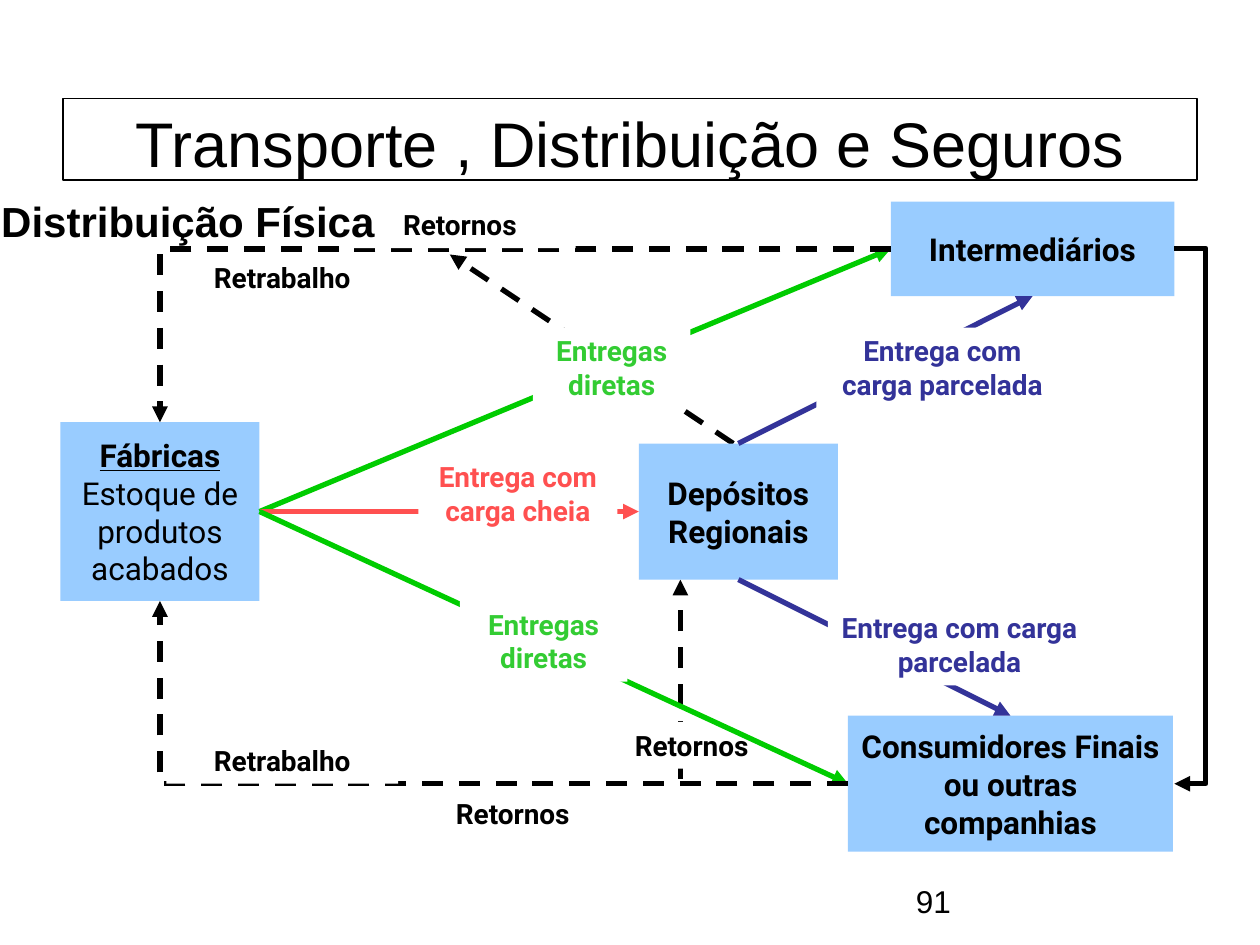
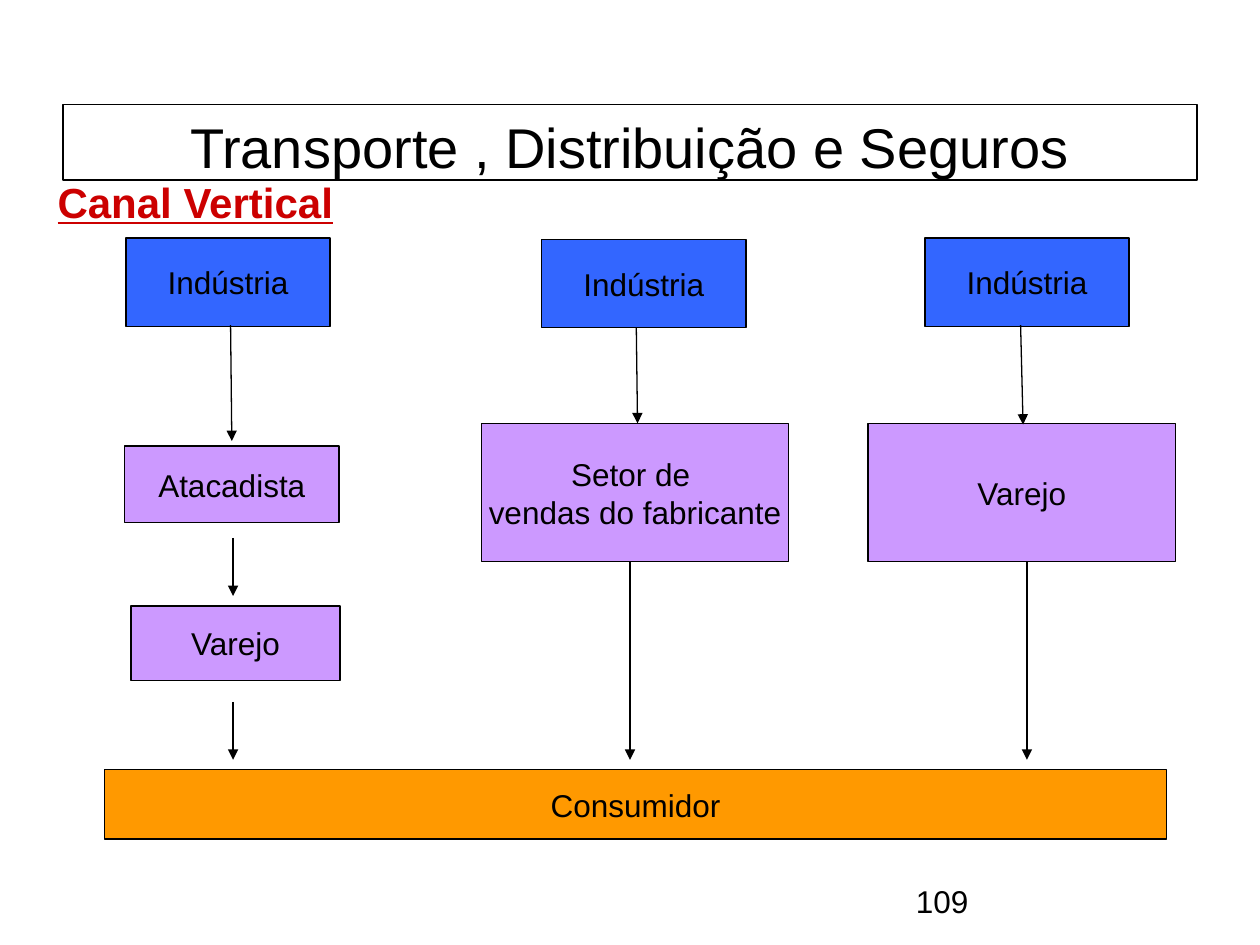
"""Builds two slides on physical distribution and vertical sales channels."""
from lxml.etree import SubElement
from pptx import Presentation
from pptx.dml.color import RGBColor
from pptx.enum.dml import MSO_LINE as Dash
from pptx.enum.shapes import MSO_CONNECTOR as Link, MSO_SHAPE as Preset
from pptx.enum.text import MSO_ANCHOR as Anchor, MSO_AUTO_SIZE as Fit, PP_ALIGN as Align
from pptx.oxml.ns import qn
from pptx.util import Inches, Pt

COLUMNS, ROWS = 100, 75
CELL = Inches(10) / COLUMNS
COLORS = {
    "ink": "000000", "paper": "FFFFFF", "site": "99CCFF", "direct": "00CC00",
    "direct text": "33CC33", "full load": "FF5050", "split load": "333399",
    "industry": "3366FF", "trade": "CC99FF", "consumer": "FF9900", "accent": "CC0000",
}
TITLE = "Transporte , Distribuição e Seguros"
TITLE_LEFT, TITLE_WIDTH, TITLE_BOTTOM = 5, 90, 14.3
TOP, LEFT, BOTTOM, RIGHT = range(4)
THICK, THIN = 3, 0.75

SITES = {
    "factories": (4.8, 33.5, 15.8, 14.2, ["Fábricas"], ["Estoque de", "produtos", "acabados"]),
    "middlemen": (70.7, 16, 22.5, 7.5, ["Intermediários"], []),
    "depots": (50.7, 35.2, 15.8, 10.8, ["Depósitos", "Regionais"], []),
    "consumers": (67.3, 56.8, 25.8, 10.8, ["Consumidores Finais", "ou outras", "companhias"], []),
}
DELIVERIES = [
    ("factories", RIGHT, "middlemen", LEFT, "direct"),
    ("factories", RIGHT, "depots", LEFT, "full load"),
    ("factories", RIGHT, "consumers", LEFT, "direct"),
    ("depots", TOP, "middlemen", BOTTOM, "split load"),
    ("depots", BOTTOM, "consumers", TOP, "split load"),
]
REWORK = [("consumers", LEFT, "factories", BOTTOM), ("middlemen", LEFT, "factories", TOP)]
DEPOT_RETURNS = [(58.2, 35.2, 35.7, 20.2), (54, 61.8, 54, 46)]
RESALE_LOOP = [(93.2, 19.7), (95.7, 19.7), (95.7, 62.2), (93.2, 62.2)]
DEPOT_LABEL = (45.7, 57.3, 18.4, 3.7, "Retornos", "ink")
ROUTE_LABELS = [
    (64.8, 26, 20, 6.4, "Entrega com carga parcelada", "split load"),
    (65.7, 48, 20.9, 6.4, "Entrega com carga parcelada", "split load"),
    (33.2, 36, 15.8, 9, "Entrega com carga cheia", "full load"),
    (42.3, 26, 12.5, 6.4, "Entregas diretas", "direct text"),
    (36.5, 47.7, 13.3, 6.4, "Entregas diretas", "direct text"),
    (27.3, 16, 18.4, 3.7, "Retornos", "ink"),
    (13.2, 58.5, 18.4, 3.7, "Retrabalho", "ink"),
    (31.5, 62.7, 18.4, 3.7, "Retornos", "ink"),
    (13.2, 20.2, 18.4, 3.7, "Retrabalho", "ink"),
]

CHANNEL_STEPS = [
    (10, 18.9, 16.2, 7, ["Indústria"], "industry"),
    (43, 19, 16.2, 7, ["Indústria"], "industry"),
    (73.4, 18.9, 16.2, 7, ["Indústria"], "industry"),
    (9.9, 35.4, 17, 6.1, ["Atacadista"], "trade"),
    (10.4, 48.1, 16.6, 5.9, ["Varejo"], "trade"),
    (38.2, 33.6, 24.4, 11, ["Setor de ", "vendas do fabricante"], "trade"),
    (68.9, 33.6, 24.4, 11, ["Varejo"], "trade"),
    (8.3, 61.1, 84.3, 5.5, ["Consumidor"], "consumer"),
]
CHANNEL_FLOWS = [
    (18.3, 25.8, 18.4, 35), (18.5, 42.7, 18.5, 47.3), (18.5, 55.7, 18.5, 60.3),
    (50.5, 26, 50.6, 33.6), (50, 44.6, 50, 60.3),
    (81, 25.8, 81.2, 33.7), (81.5, 44.6, 81.5, 60.3),
]


def cells(*counts):
    return [round(count * CELL) for count in counts]


def color(name):
    return RGBColor.from_string(COLORS[name])


def write(frame, lines, size, align=Align.CENTER, font="Arial", ink="ink"):
    """Fill a frame with (words, bold, underline) lines."""
    for number, (words, bold, underline) in enumerate(lines):
        line = frame.paragraphs[0] if number == 0 else frame.add_paragraph()
        line.alignment = align
        run = line.add_run()
        run.text = words
        run.font.name, run.font.size = font, Pt(size)
        run.font.bold, run.font.underline = bold, underline
        run.font.color.rgb = color(ink)


def paint(shape, fill, outlined):
    shape.fill.solid()
    shape.fill.fore_color.rgb = color(fill)
    if outlined:
        shape.line.color.rgb = color("ink")
        shape.line.width = Pt(THIN)
    else:
        shape.line.fill.background()


def add_box(slide, area, lines, size, fill, font="Arial", ink="ink", outlined=False, label=False):
    box = slide.shapes.add_shape(Preset.RECTANGLE, *cells(*area))
    box.shadow.inherit = False
    paint(box, fill, outlined)
    frame = box.text_frame
    frame.word_wrap = label
    frame.vertical_anchor = Anchor.TOP if label else Anchor.MIDDLE
    write(frame, lines, size, font=font, ink=ink)
    return box


def add_text(slide, area, line, size, align, ink="ink", margin=0.1):
    frame = slide.shapes.add_textbox(*cells(*area)).text_frame
    frame.word_wrap = True
    frame.margin_left = frame.margin_right = Inches(margin)
    write(frame, [line], size, align, ink=ink)


def point_arrow(line, width, ink="ink", dashed=False):
    line.color.rgb = color(ink)
    line.width = Pt(width)
    if dashed:
        line.dash_style = Dash.DASH
    SubElement(line._get_or_add_ln(), qn("a:tailEnd"), type="triangle")


def add_arrow(slide, ends, width, ink="ink", dashed=False):
    arrow = slide.shapes.add_connector(Link.STRAIGHT, *cells(*ends))
    point_arrow(arrow.line, width, ink, dashed)
    SubElement(arrow._element.spPr, qn("a:effectLst"))
    return arrow


def join(slide, sites, route, ink="ink", corner=False):
    start, start_side, end, end_side = route
    arrow = add_arrow(slide, (0, 0, 1, 1), THICK, ink, dashed=corner)
    arrow.begin_connect(sites[start], start_side)
    arrow.end_connect(sites[end], end_side)
    if corner:
        arrow._element.spPr.find(qn("a:prstGeom")).set("prst", "bentConnector2")


def add_loop(slide, corners):
    start, *others = [cells(*corner) for corner in corners]
    builder = slide.shapes.build_freeform(*start)
    builder.add_line_segments(others, close=False)
    loop = builder.convert_to_shape()
    loop.fill.background()
    point_arrow(loop.line, THICK)
    loop.shadow.inherit = False


def add_slide(deck, page, title_top, title_size):
    slide = deck.slides.add_slide(deck.slide_layouts[5])
    add_text(slide, (71.7, 69.5, 23.3, 4), (page, False, False), 18, Align.LEFT)
    title = slide.shapes.title
    title.left, title.top, title.width, title.height = cells(
        TITLE_LEFT, title_top, TITLE_WIDTH, TITLE_BOTTOM - title_top)
    paint(title, "paper", True)
    frame = title.text_frame
    frame.auto_size = Fit.NONE
    frame.vertical_anchor = Anchor.BOTTOM
    frame.margin_bottom = 0
    write(frame, [(TITLE, False, False)], title_size)
    return slide


def add_label(slide, label):
    *area, words, ink = label
    add_box(slide, area, [(words, True, False)], 16, "paper", "Roboto", ink, label=True)


def build_distribution(deck):
    slide = add_slide(deck, "91", 7.8, 36)
    for ends in DEPOT_RETURNS:
        add_arrow(slide, ends, THICK, dashed=True)
    add_label(slide, DEPOT_LABEL)
    sites = {}
    for site, (*area, names, details) in SITES.items():
        lines = [(name, True, bool(details)) for name in names]
        lines += [(detail, False, False) for detail in details]
        sites[site] = add_box(slide, area, lines, 18, "site", "Roboto")
    add_loop(slide, RESALE_LOOP)
    for *route, ink in DELIVERIES:
        join(slide, sites, route, ink)
    for route in REWORK:
        join(slide, sites, route, corner=True)
    for label in ROUTE_LABELS:
        add_label(slide, label)
    add_text(slide, (0, 15, 31, 5), ("Distribuição Física", True, False), 24, Align.LEFT, margin=0.01)


def build_channels(deck):
    slide = add_slide(deck, "109", 8.3, 32)
    add_text(slide, (2.5, 13.5, 26, 5), ("Canal Vertical", True, True), 24, Align.CENTER, "accent")
    for *area, names, fill in CHANNEL_STEPS:
        add_box(slide, area, [(name, False, False) for name in names], 18, fill, outlined=True)
    for ends in CHANNEL_FLOWS:
        add_arrow(slide, ends, THIN)


def main():
    deck = Presentation()
    deck.slide_width, deck.slide_height = cells(COLUMNS, ROWS)
    build_distribution(deck)
    build_channels(deck)
    deck.save("out.pptx")


if __name__ == "__main__":
    main()
